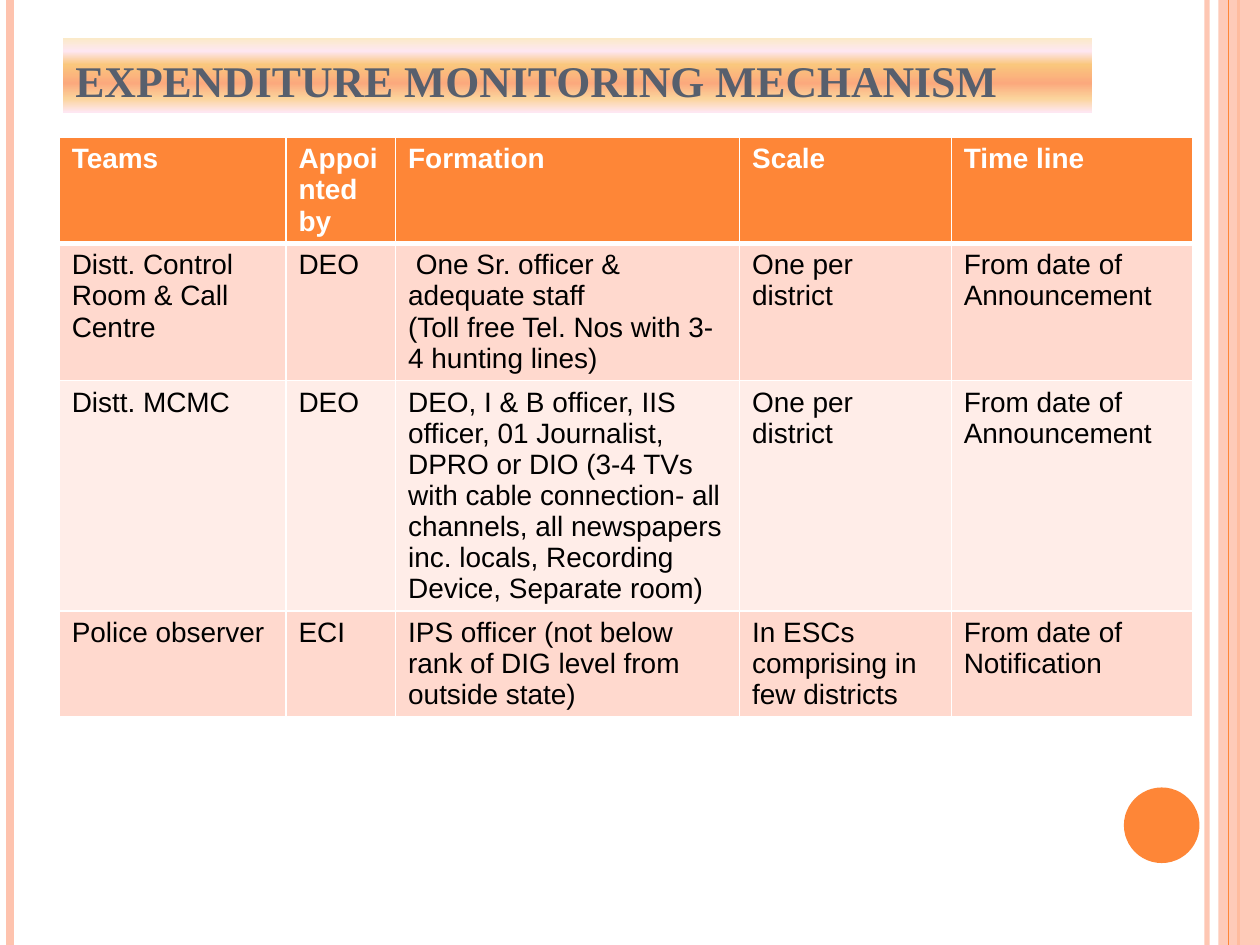
from lxml.etree import SubElement
from pptx import Presentation
from pptx.dml.color import RGBColor
from pptx.enum.shapes import MSO_CONNECTOR as Connector, MSO_SHAPE as Shape
from pptx.enum.text import MSO_ANCHOR as Anchor
from pptx.oxml.ns import qn
from pptx.util import Inches, Pt

ORANGE = RGBColor(0xFE, 0x86, 0x37)
PEACH = RGBColor(0xFE, 0xC3, 0xAE)
SLATE = RGBColor(0x57, 0x5F, 0x6D)
WHITE = RGBColor(0xFF, 0xFF, 0xFF)
BLACK = RGBColor(0x00, 0x00, 0x00)
BAND_DARK = RGBColor(0xFF, 0xD9, 0xCE)
BAND_LIGHT = RGBColor(0xFF, 0xED, 0xE8)
TITLE_STOPS = [
    (0, RGBColor(0xFB, 0xEA, 0xC7)),
    (18, RGBColor(0xFE, 0xE7, 0xF2)),
    (36, RGBColor(0xFA, 0xC7, 0x7D)),
    (61, RGBColor(0xFB, 0xA9, 0x7D)),
    (82, RGBColor(0xFB, 0xD4, 0x9C)),
    (100, RGBColor(0xFE, 0xE7, 0xF2)),
]
COLUMN_WIDTHS = [1.8, 0.87, 2.73, 1.68, 1.92]
ROW_HEIGHTS = [0.83, 1.09, 1.83, 0.83]
ROWS = [
    ["Teams", "Appointed by", "Formation", "Scale", "Time line"],
    ["Distt. Control Room & Call Centre", "DEO",
     " One Sr. officer & adequate staff\n(Toll free Tel. Nos with 3-4 hunting lines)",
     "One per district", "From date of Announcement"],
    ["Distt. MCMC", "DEO",
     "DEO, I & B officer, IIS officer, 01 Journalist, DPRO or DIO (3-4 TVs with "
     "cable connection- all channels, all newspapers inc. locals, Recording "
     "Device, Separate room)",
     "One per district", "From date of Announcement"],
    ["Police observer", "ECI",
     "IPS officer (not below rank of DIG level from outside state)",
     "In ESCs comprising in few districts", "From date of Notification"],
]


def write_text(frame, text, font="Arial", size=16, color=BLACK, bold=False):
    frame.word_wrap = True
    for index, line in enumerate(text.split("\n")):
        para = frame.add_paragraph() if index else frame.paragraphs[0]
        span = para.add_run()
        span.text = line
        span.font.name = font
        span.font.size = Pt(size)
        span.font.color.rgb = color
        span.font.bold = bold


def set_opacity(properties, percent):
    color = next(properties.iter(qn("a:srgbClr")))
    SubElement(color, qn("a:alpha"), val=str(percent * 1000))


class SlideBuilder:
    def __init__(self, page):
        self.page = page

    def vertical_line(self, x, width, color, opacity=100):
        line = self.page.shapes.add_connector(
            Connector.STRAIGHT, Inches(x), Inches(0), Inches(x), Inches(7.5))
        line.line.color.rgb = color
        line.line.width = Pt(width)
        properties = line._element.spPr
        if opacity < 100:
            set_opacity(properties, opacity)
        SubElement(properties, qn("a:effectLst"))

    def shape(self, kind, left, top, width, height, color=None, opacity=100):
        box = self.page.shapes.add_shape(
            kind, Inches(left), Inches(top), Inches(width), Inches(height))
        box.shadow.inherit = False
        box.line.fill.background()
        if color is not None:
            box.fill.solid()
            box.fill.fore_color.rgb = color
            if opacity < 100:
                set_opacity(box._element.spPr, opacity)
        return box

    def title(self, text, left, top, width, height):
        box = self.shape(Shape.RECTANGLE, left, top, width, height)
        box.fill.gradient()
        box.fill.gradient_angle = 270
        stops = next(box._element.spPr.iter(qn("a:gsLst")))
        for stop in list(stops):
            stops.remove(stop)
        for position, color in TITLE_STOPS:
            stop = SubElement(stops, qn("a:gs"), pos=str(position * 1000))
            SubElement(stop, qn("a:srgbClr"), val=str(color))
        frame = box.text_frame
        frame.vertical_anchor = Anchor.BOTTOM
        write_text(frame, text, font="Times New Roman", size=25, color=SLATE, bold=True)
        frame.paragraphs[0].alignment = 1

    def cell_borders(self, cell, top, bottom):
        properties = cell._tc.get_or_add_tcPr()
        for side, width in (("L", 1), ("R", 1), ("T", top), ("B", bottom)):
            border = SubElement(properties, qn(f"a:ln{side}"), w=str(Pt(width)))
            fill = SubElement(border, qn("a:solidFill"))
            SubElement(fill, qn("a:srgbClr"), val=str(WHITE))

    def table(self, rows, left, top, widths, heights):
        table = self.page.shapes.add_table(
            len(rows), len(widths), Inches(left), Inches(top),
            Inches(sum(widths)), Inches(sum(heights))).table
        for column, width in zip(table.columns, widths):
            column.width = Inches(width)
        for row, height in zip(table.rows, heights):
            row.height = Inches(height)
        for r, texts in enumerate(rows):
            header = r == 0
            band = ORANGE if header else BAND_DARK if r % 2 else BAND_LIGHT
            for c, text in enumerate(texts):
                cell = table.cell(r, c)
                self.cell_borders(cell, top=3 if r == 1 else 1, bottom=3 if header else 1)
                cell.fill.solid()
                cell.fill.fore_color.rgb = band
                write_text(cell.text_frame, text, bold=header,
                           color=WHITE if header else BLACK)


def main():
    deck = Presentation()
    deck.slide_width = Inches(10)
    deck.slide_height = Inches(7.5)
    builder = SlideBuilder(deck.slides.add_slide(deck.slide_layouts[6]))
    builder.vertical_line(9.58, 3, PEACH, opacity=93)
    builder.vertical_line(0.08, 4.5, PEACH)
    builder.vertical_line(9.83, 1.5, ORANGE)
    builder.shape(Shape.RECTANGLE, 9.67, 0, 0.33, 7.5, PEACH, opacity=87)
    builder.vertical_line(9.75, 0.75, ORANGE)
    builder.shape(Shape.OVAL, 8.92, 6.25, 0.6, 0.6, ORANGE)
    builder.title("EXPENDITURE MONITORING MECHANISM", 0.5, 0.3, 8.17, 0.59)
    builder.table(ROWS, 0.47, 1.09, COLUMN_WIDTHS, ROW_HEIGHTS)
    deck.save("out.pptx")


if __name__ == "__main__":
    main()
